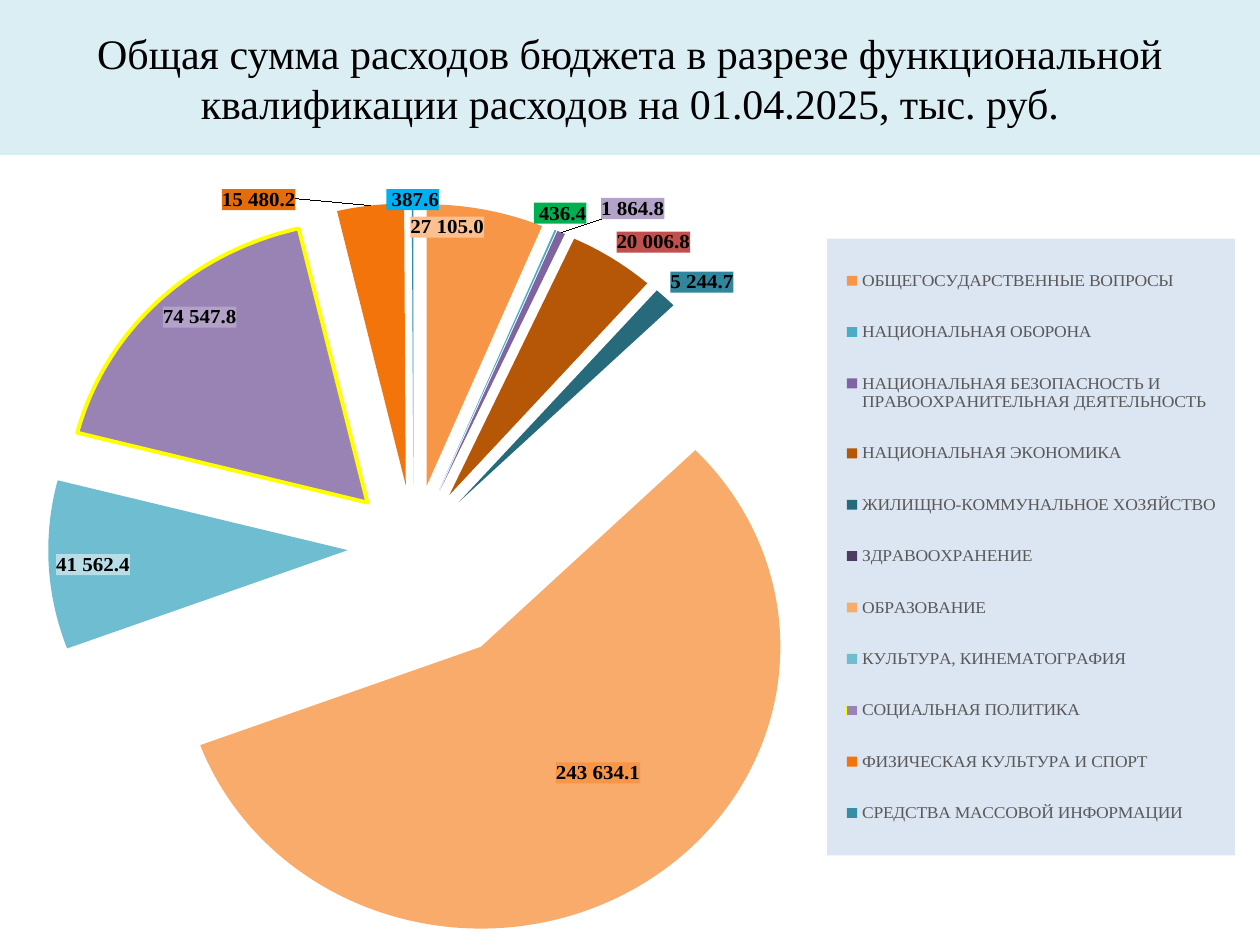
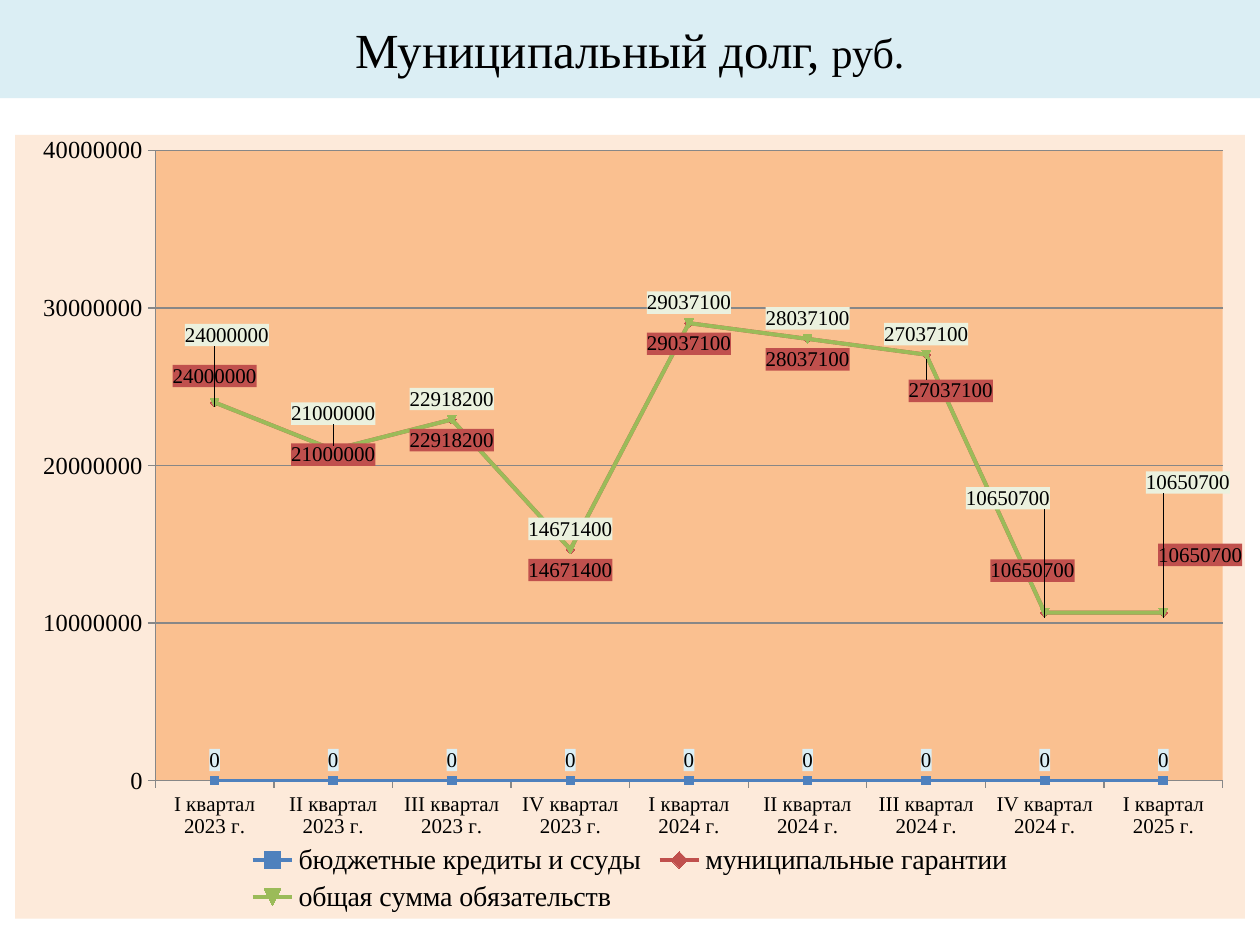
from typing import NamedTuple

from lxml.etree import SubElement
from pptx import Presentation
from pptx.chart.data import CategoryChartData
from pptx.dml.color import RGBColor
from pptx.enum.chart import XL_CHART_TYPE, XL_LABEL_POSITION, XL_LEGEND_POSITION, XL_TICK_MARK
from pptx.enum.shapes import MSO_SHAPE
from pptx.enum.text import MSO_ANCHOR, PP_ALIGN
from pptx.oxml import parse_xml
from pptx.oxml.ns import nsdecls, qn
from pptx.util import Inches, Pt

FONT = "Times New Roman"
BLACK, GRAY, AXIS = "000000", "595959", "878787"
BAND, PEACH, ORANGE, LEGEND = "DBEEF4", "FDEADA", "FAC090", "DCE6F2"
MONEY = "#\\ ##0.0"
ABOVE, BELOW = XL_LABEL_POSITION.ABOVE, XL_LABEL_POSITION.BELOW
OUTSIDE, INSIDE = XL_LABEL_POSITION.OUTSIDE_END, XL_LABEL_POSITION.INSIDE_END
CENTER = XL_LABEL_POSITION.CENTER


class Box(NamedTuple):
    left: float
    top: float
    width: float
    height: float


class Sector(NamedTuple):
    name: str
    spent: float
    color: str
    label_fill: str = ""
    position: XL_LABEL_POSITION = OUTSIDE
    shift: tuple[float, float] = (0, 0)


class Debt(NamedTuple):
    name: str
    amounts: list[int]
    color: str
    label_fill: str
    position: XL_LABEL_POSITION
    shifts: dict[int, tuple[float, float]]


SECTORS = [
    Sector("ОБЩЕГОСУДАРСТВЕННЫЕ ВОПРОСЫ", 27105, "F79646", ORANGE, INSIDE),
    Sector("НАЦИОНАЛЬНАЯ ОБОРОНА", 436.4, "4BACC6", "00B050", shift=(-0.02, 0)),
    Sector("НАЦИОНАЛЬНАЯ БЕЗОПАСНОСТЬ И ПРАВООХРАНИТЕЛЬНАЯ ДЕЯТЕЛЬНОСТЬ",
           1864.8, "8064A2", "B3A2C7", shift=(0.03, -0.01)),
    Sector("НАЦИОНАЛЬНАЯ ЭКОНОМИКА", 20006.8, "B65708", "C0504D"),
    Sector("ЖИЛИЩНО-КОММУНАЛЬНОЕ ХОЗЯЙСТВО", 5244.7, "276A7C", "31859C"),
    Sector("ЗДРАВООХРАНЕНИЕ", 0, "4D3B62"),
    Sector("ОБРАЗОВАНИЕ", 243634.1, "F9AB6B", "F79646", CENTER, (0.03, 0.01)),
    Sector("КУЛЬТУРА, КИНЕМАТОГРАФИЯ", 41562.4, "6FBDD1", "B7DEE8", INSIDE),
    Sector("СОЦИАЛЬНАЯ ПОЛИТИКА", 74547.8, "9983B5", "B3A2C7", INSIDE),
    Sector("ФИЗИЧЕСКАЯ КУЛЬТУРА И СПОРТ", 15480.2, "F3740B", "E46C0A", shift=(-0.06, 0)),
    Sector("СРЕДСТВА МАССОВОЙ ИНФОРМАЦИИ", 387.6, "358EA6", "00B0F0"),
]
EDUCATION, SOCIAL_POLICY = 6, 8

QUARTERS = [f"{quarter} квартал {year} г." for year in (2023, 2024)
            for quarter in ("I", "II", "III", "IV")] + ["I квартал 2025 г."]
OBLIGATIONS = [24000000, 21000000, 22918200, 14671400, 29037100,
               28037100, 27037100, 10650700, 10650700]
DEBTS = [
    Debt("бюджетные кредиты и ссуды", [0] * len(QUARTERS), "4F81BD", BAND, ABOVE, {}),
    Debt("муниципальные гарантии", OBLIGATIONS, "C0504D", "C0504D", BELOW,
         {0: (0, -0.06), 1: (0, -0.02), 6: (0.02, 0.02), 7: (-0.01, -0.08), 8: (0.03, -0.1)}),
    Debt("общая сумма обязательств", OBLIGATIONS, "9BBB59", "EBF1DE", ABOVE,
         {0: (0.01, -0.06), 1: (0, -0.02), 7: (-0.03, -0.12), 8: (0.02, -0.14)}),
]


def rgb(color: str) -> RGBColor:
    return RGBColor.from_string(color)


def set_font(font, size: float, color: str = BLACK, bold: bool = False) -> None:
    font.name, font.size, font.bold = FONT, Pt(size), bold
    font.color.rgb = rgb(color)


def fill_xml(color: str):
    return parse_xml(f'<c:spPr {nsdecls("c", "a")}><a:solidFill><a:srgbClr val="{color}"/>'
                     '</a:solidFill><a:ln><a:noFill/></a:ln></c:spPr>')


def fill_behind_text(element, color: str) -> None:
    """Fill a chart part that already has text properties."""
    element.find(qn("c:txPr")).addprevious(fill_xml(color))


def layout_xml(**values):
    layout = parse_xml(f'<c:layout {nsdecls("c")}><c:manualLayout/></c:layout>')
    for tag, value in values.items():
        SubElement(layout[0], qn(f"c:{tag}")).set("val", str(value))
    return layout


def place(element, index: int, box: Box, **target) -> None:
    """Fix a chart part at fractions of the chart area."""
    for layout in element.findall(qn("c:layout")):
        element.remove(layout)
    element.insert(index, layout_xml(**target, xMode="edge", yMode="edge", x=box.left,
                                     y=box.top, w=box.width, h=box.height))


def explosion_xml(percent: int):
    return parse_xml(f'<c:explosion {nsdecls("c")} val="{percent}"/>')


def label_point(series, index: int, color: str, position: XL_LABEL_POSITION,
                shift: tuple[float, float], bold: bool = False) -> None:
    label = series.points[index].data_label
    set_font(label.font, 12, bold=bold)
    label.position = position
    element = series._element.xpath(f'.//c:dLbl[c:idx/@val="{index}"]')[0]
    fill_behind_text(element, color)
    if any(shift):
        element.insert(1, layout_xml(x=shift[0], y=shift[1]))


def add_title(slide, height: float, parts: list[tuple[str, float]]) -> None:
    band = slide.shapes.add_shape(MSO_SHAPE.RECTANGLE, 0, 0, Inches(10), Inches(height))
    band.shadow.inherit = False
    band.fill.solid()
    band.fill.fore_color.rgb = rgb(BAND)
    band.line.fill.background()
    band.text_frame.word_wrap = True
    band.text_frame.vertical_anchor = MSO_ANCHOR.MIDDLE
    paragraph = band.text_frame.paragraphs[0]
    paragraph.alignment = PP_ALIGN.CENTER
    for text, size in parts:
        run = paragraph.add_run()
        run.text = text
        set_font(run.font, size)


def add_chart(slide, kind: XL_CHART_TYPE, box: Box, data: CategoryChartData, plot_box: Box,
              legend_position: XL_LEGEND_POSITION, legend_size: float, legend_color: str):
    chart = slide.shapes.add_chart(kind, *map(Inches, box), data).chart
    set_font(chart.font, 12)
    chart.has_title = False
    chart.has_legend = True
    chart.legend.position = legend_position
    chart.legend.include_in_layout = False
    set_font(chart.legend.font, legend_size, legend_color)
    place(chart._chartSpace.chart.plotArea, 0, plot_box, layoutTarget="inner")
    return chart


def build_expenses(slide) -> None:
    add_title(slide, 1.23, [("Общая сумма расходов бюджета в разрезе функциональной "
                             "квалификации расходов на 01.04.2025, тыс. руб.", 24)])
    data = CategoryChartData(number_format=MONEY)
    data.categories = [sector.name for sector in SECTORS]
    data.add_series("Расходы", [sector.spent for sector in SECTORS])
    chart = add_chart(slide, XL_CHART_TYPE.PIE, Box(0, 1.39, 9.8, 5.98), data,
                      Box(0.01, 0.02, 0.65, 0.97), XL_LEGEND_POSITION.RIGHT, 10, GRAY)
    legend = chart.legend._element
    place(legend, 1, Box(0.67, 0.07, 0.33, 0.87))
    fill_behind_text(legend, LEGEND)

    chart.plots[0].vary_by_categories = True
    expenses = chart.plots[0].series[0]
    labels = expenses.data_labels
    set_font(labels.font, 12, bold=True)
    labels.number_format, labels.number_format_is_linked = MONEY, False
    labels.show_value = True
    for index, sector in enumerate(SECTORS):
        slice_format = expenses.points[index].format
        slice_format.fill.solid()
        slice_format.fill.fore_color.rgb = rgb(sector.color)
        slice_format.line.fill.background()
        if sector.label_fill:
            label_point(expenses, index, sector.label_fill, sector.position, sector.shift, True)
        else:
            labels._element.insert_element_before(
                parse_xml(f'<c:dLbl {nsdecls("c")}><c:idx val="{index}"/>'
                          '<c:delete val="1"/></c:dLbl>'),
                *(f"c:{tag}" for tag in ("numFmt", "spPr", "txPr", "dLblPos", "showLegendKey")))
    outline = expenses.points[SOCIAL_POLICY].format.line
    outline.color.rgb = rgb("FFFF00")
    outline.width = Pt(2.25)

    slices = expenses._element.findall(qn("c:dPt"))
    slices[0].addprevious(explosion_xml(22))
    slices[EDUCATION].find(qn("c:spPr")).addprevious(explosion_xml(42))


def build_debt(slide) -> None:
    add_title(slide, 0.78, [("Муниципальный долг, ", 28), ("руб.", 24)])
    data = CategoryChartData(number_format="General")
    data.categories = QUARTERS
    for debt in DEBTS:
        data.add_series(debt.name, debt.amounts)
    chart = add_chart(slide, XL_CHART_TYPE.LINE_MARKERS, Box(0.12, 1.07, 9.76, 6.22), data,
                      Box(0.114, 0.02, 0.868, 0.804), XL_LEGEND_POSITION.BOTTOM, 16, BLACK)
    fill_behind_text(chart._chartSpace, PEACH)
    chart._chartSpace.chart.plotArea.append(fill_xml(ORANGE))

    for axis, size in ((chart.category_axis, 12), (chart.value_axis, 14)):
        set_font(axis.tick_labels.font, size)
        axis.major_tick_mark = XL_TICK_MARK.OUTSIDE
        axis.minor_tick_mark = XL_TICK_MARK.NONE
        axis.format.line.color.rgb = rgb(AXIS)
    amounts = chart.value_axis
    amounts.minimum_scale, amounts.maximum_scale = 0, 40000000
    amounts.major_unit = 10000000
    amounts.has_major_gridlines = True
    amounts.major_gridlines.format.line.color.rgb = rgb(AXIS)

    for debt, series in zip(DEBTS, chart.plots[0].series):
        series.smooth = False
        series.format.line.color.rgb = rgb(debt.color)
        series.format.line.width = Pt(2.25)
        series.marker.size = 5
        series.marker.format.fill.solid()
        series.marker.format.fill.fore_color.rgb = rgb(debt.color)
        series.marker.format.line.color.rgb = rgb(debt.color)
        labels = series.data_labels
        set_font(labels.font, 12)
        labels.show_value = True
        labels.position = debt.position
        fill_behind_text(labels._element, debt.label_fill)
        for index, shift in debt.shifts.items():
            label_point(series, index, debt.label_fill, debt.position, shift)


def main() -> None:
    deck = Presentation()
    deck.slide_width, deck.slide_height = Inches(10), Inches(7.5)
    for build in (build_expenses, build_debt):
        build(deck.slides.add_slide(deck.slide_layouts[6]))
    deck.save("out.pptx")


if __name__ == "__main__":
    main()
